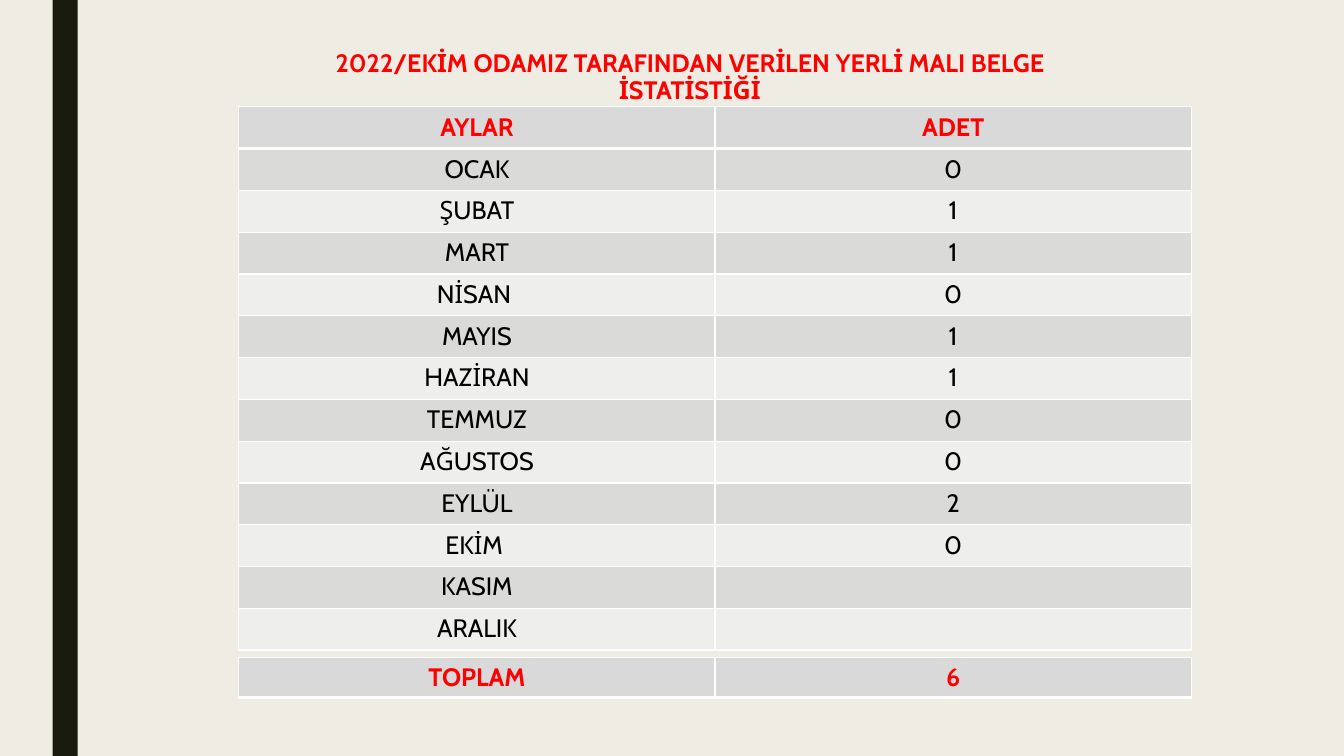
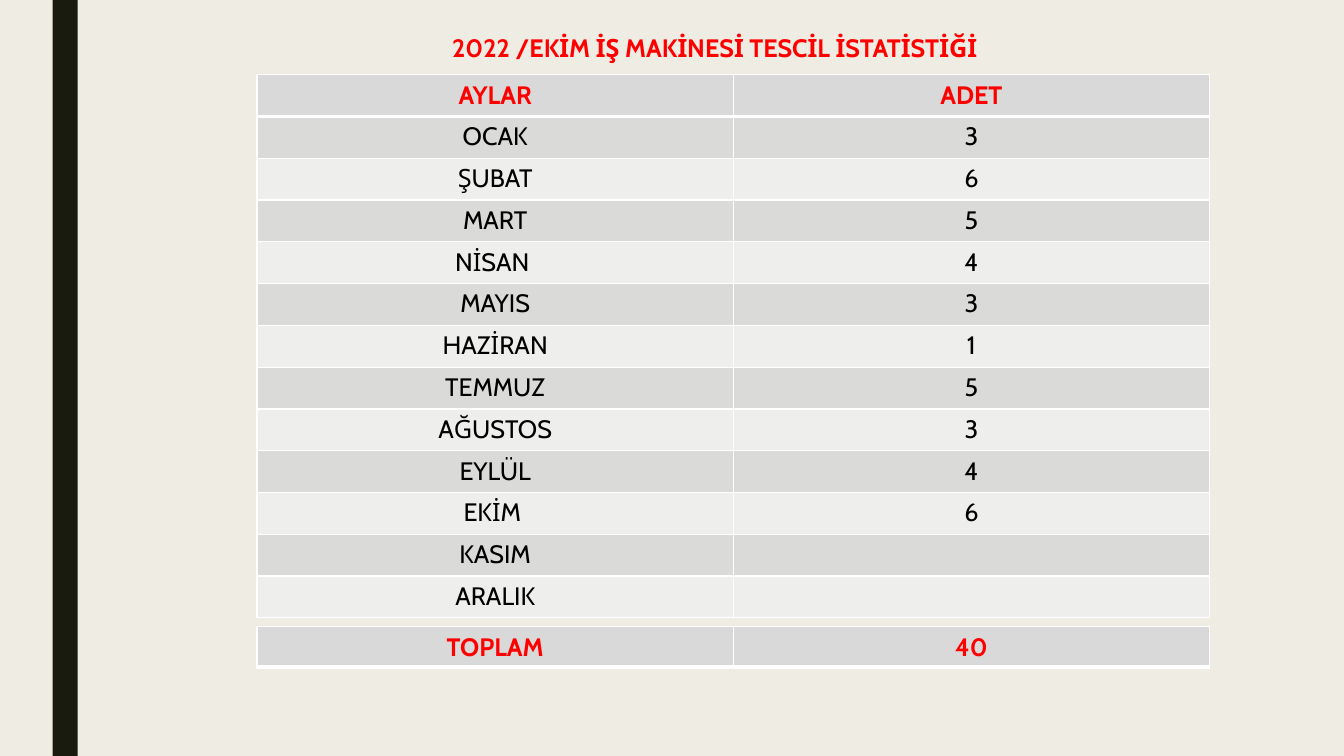
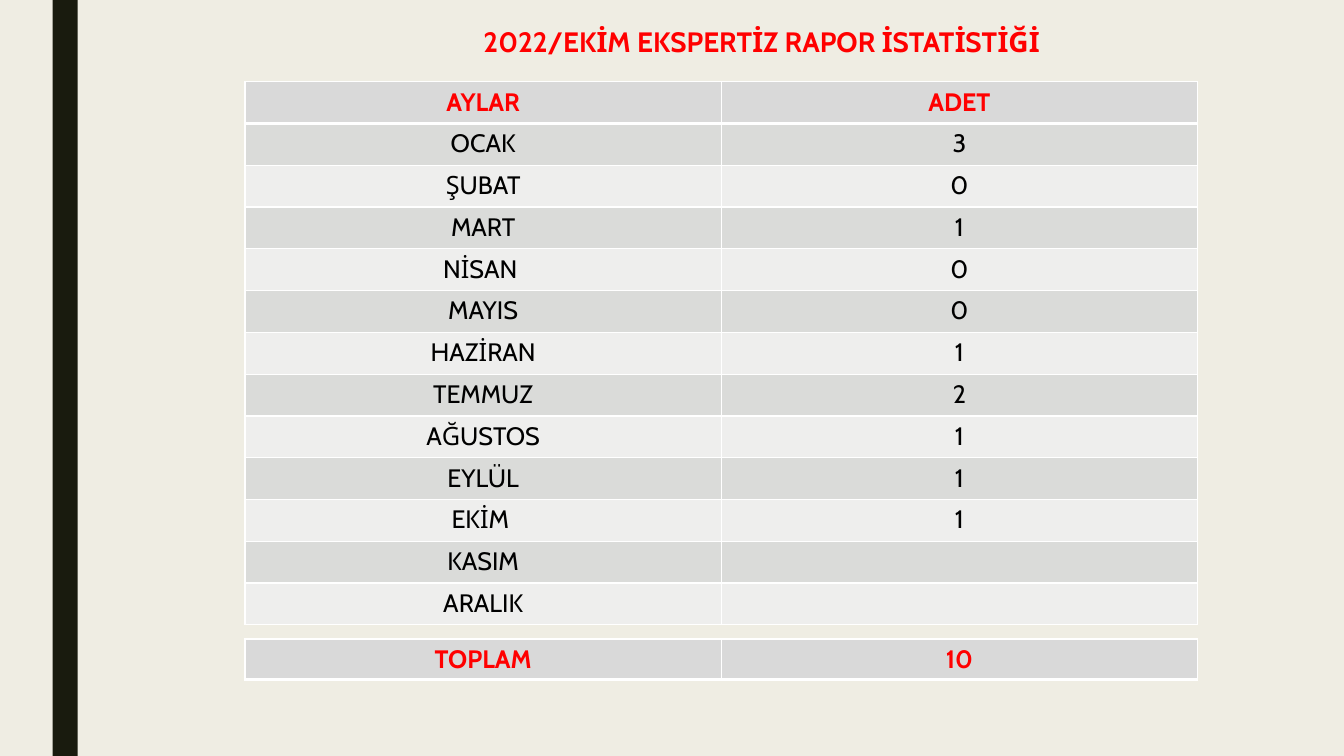
from dataclasses import dataclass

from lxml import etree
from pptx import Presentation
from pptx.dml.color import RGBColor
from pptx.enum.shapes import MSO_SHAPE
from pptx.enum.text import MSO_ANCHOR, PP_ALIGN
from pptx.oxml.ns import qn
from pptx.util import Pt

RECT = MSO_SHAPE.RECTANGLE
TOP = MSO_ANCHOR.TOP
CENTER = PP_ALIGN.CENTER

MONTHS = ["OCAK", "ŞUBAT", "MART", "NİSAN ", "MAYIS", "HAZİRAN", "TEMMUZ",
          "AĞUSTOS", "EYLÜL", "EKİM ", "KASIM", "ARALIK"]


@dataclass(frozen=True)
class Theme:
    font: str = "Cabin"
    size: int = 18
    large: int = 20
    paper: str = "EFEDE3"
    band: str = "191B0E"
    accent: str = "FF0000"
    ink: str = "000000"
    head: str = "D9D9D9"
    odd: str = "DADBD9"
    even: str = "EEEEED"
    rule: str = "FFFFFF"
    thin: int = 1
    thick: int = 3
    spacing: float = 0.89


class Deck:
    width, height = 960, 540
    column = 340.2
    row = 29.85
    total = 28.8

    def __init__(self, theme):
        self.theme = theme
        self.file = Presentation()
        self.file.slide_width = Pt(self.width)
        self.file.slide_height = Pt(self.height)
        self.slide = None

    def paint(self, fill, color):
        fill.solid()
        fill.fore_color.rgb = RGBColor.from_string(color)

    def page(self):
        self.slide = self.file.slides.add_slide(self.file.slide_layouts[6])
        self.paint(self.slide.background.fill, self.theme.paper)
        band = self.slide.shapes.add_shape(RECT, Pt(37.5), Pt(0), Pt(18), Pt(self.height))
        band.shadow.inherit = False
        band.line.fill.background()
        self.paint(band.fill, self.theme.band)

    def label(self, frame, text, color, **style):
        para = frame.paragraphs[0]
        para.alignment = CENTER
        if text:
            run = para.add_run()
            run.text = text
            style = {"name": self.theme.font, "size": Pt(self.theme.size)} | style
            for name, value in style.items():
                setattr(run.font, name, value)
            run.font.color.rgb = RGBColor.from_string(color)
        return para

    def title(self, text, box, size):
        frame = self.slide.shapes.add_textbox(*map(Pt, box)).text_frame
        frame.word_wrap = True
        frame.vertical_anchor = TOP
        para = self.label(frame, text, self.theme.accent, size=Pt(size), bold=True)
        para.line_spacing = self.theme.spacing

    def border(self, cell, top, bottom):
        thin = self.theme.thin
        props = cell._tc.get_or_add_tcPr()
        for side, width in {"L": thin, "R": thin, "T": top, "B": bottom}.items():
            line = etree.SubElement(props, qn(f"a:ln{side}"), w=str(Pt(width)))
            fill = etree.SubElement(line, qn("a:solidFill"))
            etree.SubElement(fill, qn("a:srgbClr"), val=self.theme.rule)

    def table(self, left, top, height, rows, strong):
        theme = self.theme
        grid = self.slide.shapes.add_table(
            len(rows), 2, Pt(left), Pt(top), Pt(2 * self.column), Pt(height * len(rows))).table
        grid.first_row = grid.horz_banding = False
        for column in grid.columns:
            column.width = Pt(self.column)
        for i, texts in enumerate(rows):
            grid.rows[i].height = Pt(height)
            bold = i == strong
            shade = theme.head if bold else theme.odd if i % 2 else theme.even
            color = theme.accent if bold else theme.ink
            upper = theme.thick if i == strong + 1 else theme.thin
            lower = theme.thick if bold else theme.thin
            for j, text in enumerate(texts):
                cell = grid.cell(i, j)
                self.border(cell, upper, lower)
                self.paint(cell.fill, shade)
                self.label(cell.text_frame, text, color, bold=bold)

    def report(self, title, box, size, left, top, foot, counts):
        self.page()
        self.title(title, box, size)
        values = [str(count) for count in counts]
        values += [""] * (len(MONTHS) - len(values))
        rows = [("AYLAR", "ADET"), *zip(MONTHS, values)]
        self.table(left, top, self.row, rows, 0)
        self.table(left, foot, self.total, [("TOPLAM", str(sum(counts)))], 0)


def main():
    theme = Theme()
    deck = Deck(theme)
    deck.report("2022/EKİM ODAMIZ TARAFINDAN VERİLEN YERLİ MALI BELGE İSTATİSTİĞİ",
                (190.8, 33.1, 604.1, 27.4), theme.size, 170.6, 76.3, 469.4,
                [0, 1, 1, 0, 1, 1, 0, 0, 2, 0])
    deck.report("2022 /EKİM İŞ MAKİNESİ TESCİL İSTATİSTİĞİ",
                (257.8, 22.3, 505.4, 25.2), theme.size, 183.6, 53.3, 447.8,
                [3, 6, 5, 4, 3, 1, 5, 3, 4, 6])
    deck.report("2022/EKİM EKSPERTİZ RAPOR İSTATİSTİĞİ",
                (277.2, 16.6, 533.5, 31.7), theme.large, 175, 58.3, 456.5,
                [3, 0, 1, 0, 0, 1, 2, 1, 1, 1])
    deck.file.save("out.pptx")


if __name__ == "__main__":
    main()
